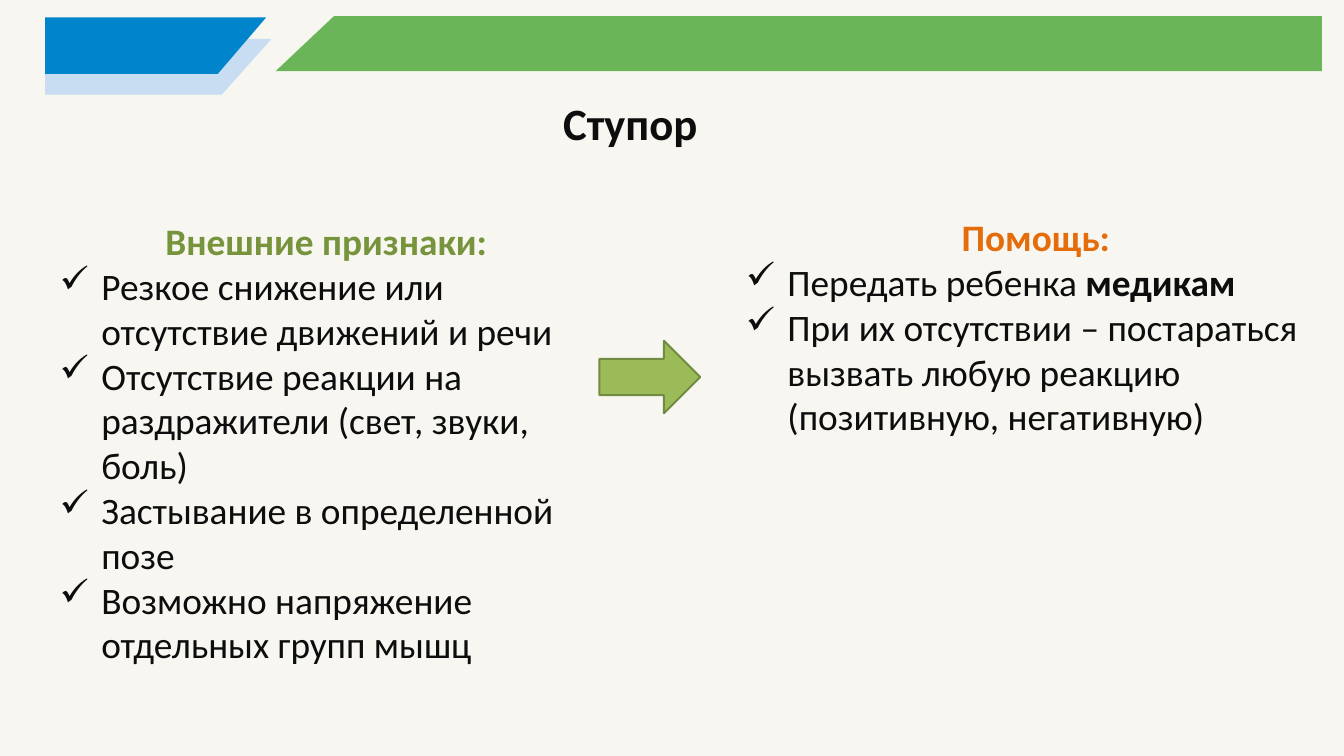
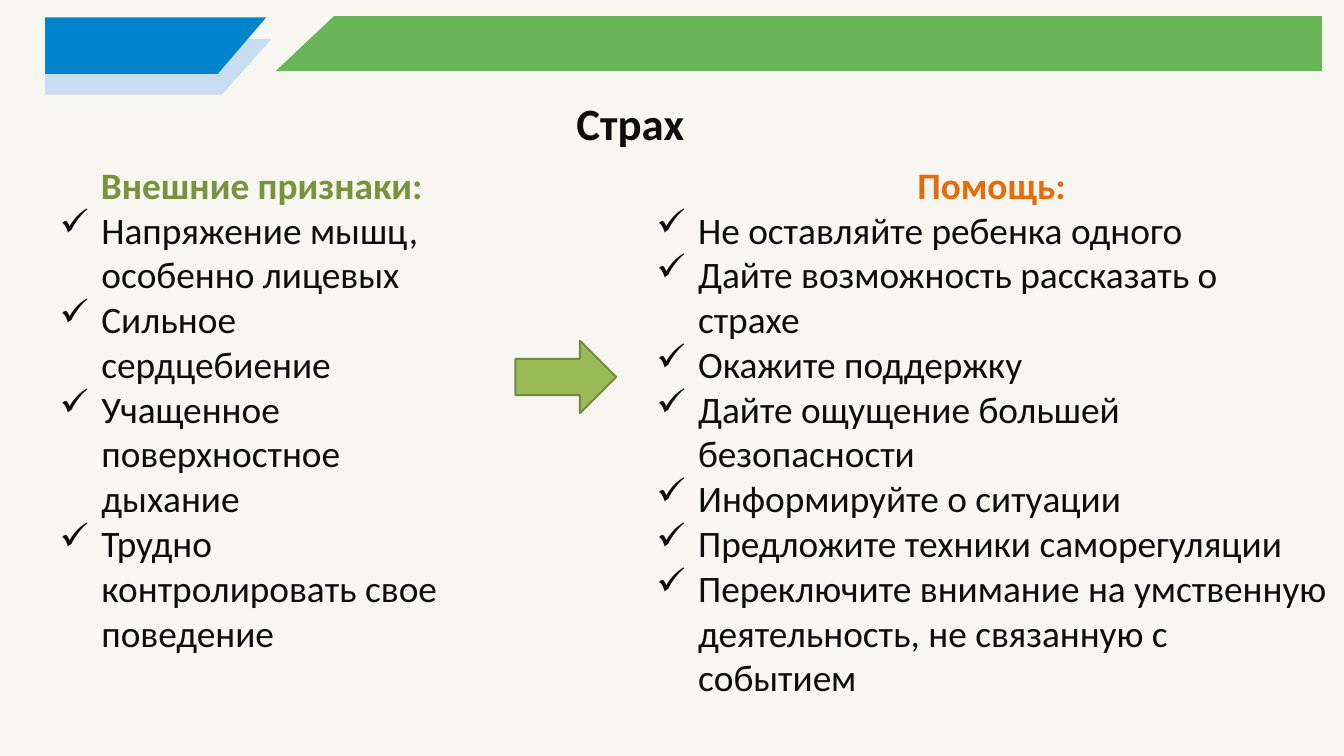
import pptx
import pptx.dml.color
import pptx.enum.shapes
import pptx.enum.text
import pptx.oxml.ns
import pptx.util
from lxml import etree

Inches = pptx.util.Inches
Pt = pptx.util.Pt
ALIGN = pptx.enum.text.PP_ALIGN
ANCHOR = pptx.enum.text.MSO_ANCHOR

PAPER, INK = "F7F6F1", "0D0D0D"
SIGNS_COLOR, HELP_COLOR = "77933C", "E46C0A"
ARROW_FILL, ARROW_LINE = "9BBB59", "738A42"
BANDS = [
    ("C8DDF1", [(4.04, 0.58), (0.67, 0.58), (0.67, 1.41), (3.3, 1.41)]),
    ("0085CC", [(3.96, 0.26), (0.67, 0.26), (0.67, 1.1), (3.24, 1.1)]),
    ("69B558", [(19.67, 0.24), (4.97, 0.24), (4.1, 1.06), (19.67, 1.06)]),
]
HANGING = 0.62

# Each item is a list of (text, bold) runs or a plain string.
STATES = [
    {
        "title": "Ступор ",
        "signs_box": (0.79, 3.2, 8.13, 7.81),
        "signs": [
            "Резкое снижение или отсутствие движений и речи",
            "Отсутствие реакции на раздражители (свет, звуки, боль)",
            "Застывание в определенной позе",
            "Возможно напряжение отдельных групп мышц",
        ],
        "help_box": (11, 3.14, 8.83, 4.81),
        "help": [
            [("Передать ребенка ", False), ("медикам", True)],
            "При их отсутствии – постараться вызвать любую реакцию "
            "(позитивную, негативную)",
        ],
        "arrow_left": 8.92,
    },
    {
        "title": "Страх ",
        "signs_box": (0.79, 2.36, 6.21, 8.48),
        "signs": [
            "Напряжение мышц, особенно лицевых",
            "Сильное сердцебиение",
            "Учащенное поверхностное дыхание",
            "Трудно контролировать свое поведение",
        ],
        "help_box": (9.67, 2.36, 10.17, 8.85),
        "help": [
            "Не оставляйте ребенка одного",
            "Дайте возможность рассказать о страхе",
            "Окажите поддержку",
            "Дайте ощущение большей безопасности",
            "Информируйте о ситуации",
            "Предложите техники саморегуляции",
            "Переключите внимание на умственную деятельность, "
            "не связанную с событием",
        ],
        "arrow_left": 7.67,
    },
]


def rgb(hex_color):
    return pptx.dml.color.RGBColor.from_string(hex_color)


def paint(target, hex_color):
    target.fill.solid()
    target.fill.fore_color.rgb = rgb(hex_color)


def write(paragraph, text, size=40, color=INK, bold=False, font="Calibri"):
    """Append one formatted run to the paragraph."""
    run = paragraph.add_run()
    run.text = text
    run.font.name = font
    run.font.size = Pt(size)
    run.font.bold = bold
    run.font.color.rgb = rgb(color)


def add_check_mark(paragraph):
    properties = paragraph._p.get_or_add_pPr()
    properties.set("marL", str(Inches(HANGING)))
    properties.set("indent", str(-Inches(HANGING)))
    bullet = etree.SubElement(properties, pptx.oxml.ns.qn("a:buChar"))
    bullet.set("char", "✓")


class Deck:
    def __init__(self):
        self.prs = pptx.Presentation()
        self.prs.slide_width = Inches(20)
        self.prs.slide_height = Inches(11.25)
        paint(self.prs.slide_master.background, PAPER)
        self.slide = None

    def new_slide(self, title):
        self.slide = self.prs.slides.add_slide(self.prs.slide_layouts[5])
        self.bands()
        self.title(title)

    def bands(self):
        group = self.slide.shapes.add_group_shape()
        for color, outline in BANDS:
            start, *others = [(Inches(x), Inches(y)) for x, y in outline]
            builder = group.shapes.build_freeform(*start)
            builder.add_line_segments(others, close=True)
            band = builder.convert_to_shape()
            band.shadow.inherit = False
            band.line.fill.background()
            paint(band, color)

    def title(self, text):
        title = self.slide.shapes.title
        title.left, title.top = Inches(3.93), Inches(1.39)
        title.width, title.height = Inches(11.05), Inches(0.97)
        frame = title.text_frame
        frame.auto_size = pptx.enum.text.MSO_AUTO_SIZE.NONE
        frame.vertical_anchor = ANCHOR.BOTTOM
        frame.margin_left = frame.margin_right = Inches(0.13)
        frame.margin_top = frame.margin_bottom = Inches(0.13)
        heading = frame.paragraphs[0]
        heading.alignment = ALIGN.CENTER
        heading.line_spacing = 0.9
        write(heading, text, size=48, bold=True)

    def checklist(self, box, heading, color, items):
        """Place a centred coloured heading above check-marked items."""
        frame = self.slide.shapes.add_textbox(*map(Inches, box)).text_frame
        frame.word_wrap = True
        frame.auto_size = pptx.enum.text.MSO_AUTO_SIZE.SHAPE_TO_FIT_TEXT
        first = frame.paragraphs[0]
        first.alignment = ALIGN.CENTER
        write(first, heading, color=color, bold=True)
        for item in items:
            paragraph = frame.add_paragraph()
            add_check_mark(paragraph)
            runs = [(item, False)] if isinstance(item, str) else item
            for text, bold in runs:
                write(paragraph, text, bold=bold)

    def arrow(self, left):
        arrow = self.slide.shapes.add_shape(
            pptx.enum.shapes.MSO_SHAPE.RIGHT_ARROW,
            Inches(left), Inches(5.07), Inches(1.5), Inches(1.08))
        arrow.shadow.inherit = False
        paint(arrow, ARROW_FILL)
        arrow.line.color.rgb = rgb(ARROW_LINE)
        arrow.line.width = Pt(2)


def main():
    deck = Deck()
    for state in STATES:
        deck.new_slide(state["title"])
        deck.checklist(state["signs_box"], "Внешние признаки:",
                       SIGNS_COLOR, state["signs"])
        deck.checklist(state["help_box"], "Помощь:",
                       HELP_COLOR, state["help"])
        deck.arrow(state["arrow_left"])
    deck.prs.save("out.pptx")


if __name__ == "__main__":
    main()
